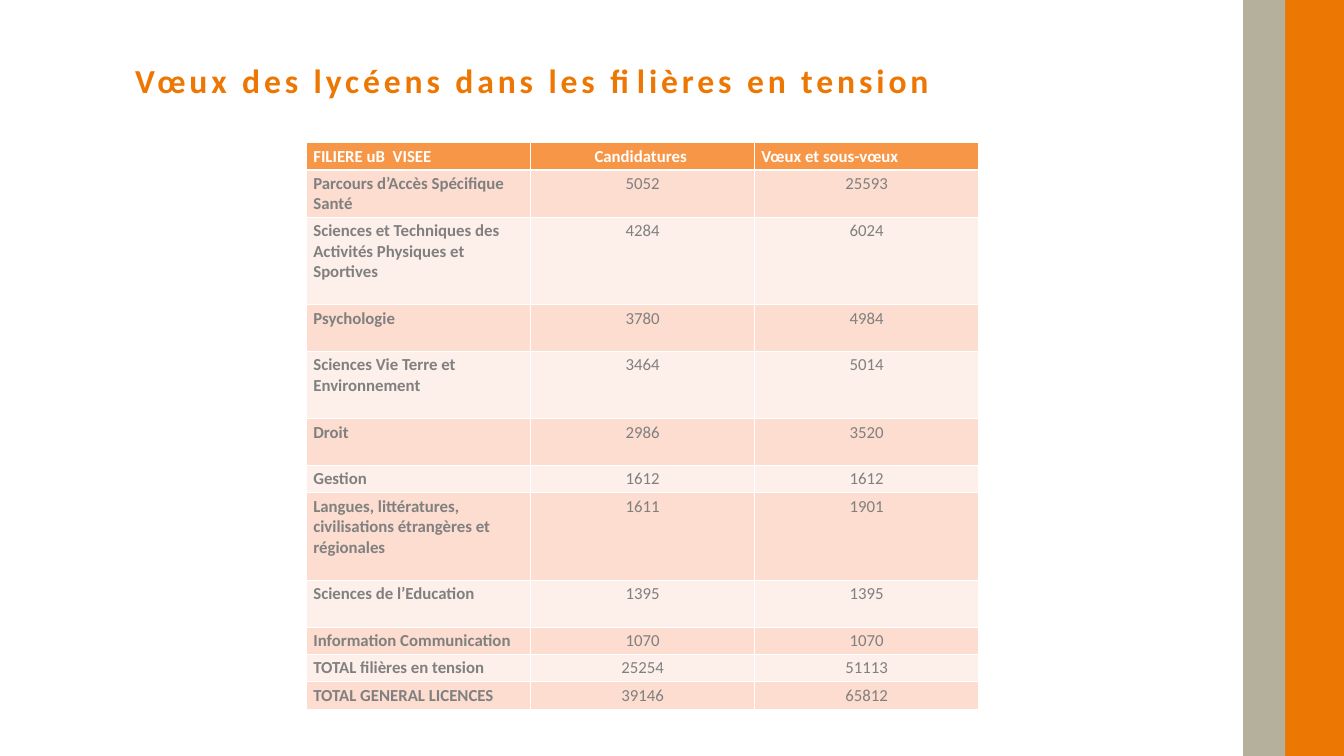
from lxml import etree
from pptx import Presentation
from pptx.dml.color import RGBColor
from pptx.enum.shapes import MSO_SHAPE
from pptx.enum.text import MSO_ANCHOR, PP_ALIGN
from pptx.oxml.ns import qn
from pptx.util import Pt

PX = 9525  # 96 px to the inch
RECTANGLE = MSO_SHAPE.RECTANGLE
LEFT, CENTER = PP_ALIGN.LEFT, PP_ALIGN.CENTER
TOP = MSO_ANCHOR.TOP
COLORS = {
    "orange": "EC7703",
    "taupe": "B5B09C",
    "header": "F79646",
    "band_dark": "FCDDCF",
    "band_light": "FDEFE9",
    "grey": "808080",
    "white": "FFFFFF",
}


def write(frame, text, size=18, color="grey", bold=False, align=LEFT, tracking=0):
    """Fill a text frame with one formatted run; tracking is in points."""
    frame.word_wrap = True
    paragraph = frame.paragraphs[0]
    paragraph.alignment = align
    run = paragraph.add_run()
    run.text = text
    run.font.name = "Calibri"
    run.font.size = Pt(size)
    run.font.bold = bold
    run.font.color.rgb = RGBColor.from_string(COLORS[color])
    if tracking:
        run.font._element.set("spc", str(round(tracking * 100)))


def set_borders(cell, **widths):
    """Draw white cell borders; widths are points keyed by L, R, T and B."""
    properties = cell._tc.get_or_add_tcPr()
    for position, (side, width) in enumerate(widths.items()):
        line = etree.Element(qn(f"a:ln{side}"), w=str(Pt(width)))
        fill = etree.SubElement(line, qn("a:solidFill"))
        etree.SubElement(fill, qn("a:srgbClr"), val=COLORS["white"])
        properties.insert(position, line)


prs = Presentation()
prs.slide_width = 1920 * PX
prs.slide_height = 1080 * PX
slide = prs.slides.add_slide(prs.slide_layouts[6])

# Side bands
for left, width, color in [(1779, 141, "orange"), (1776, 60, "taupe")]:
    band = slide.shapes.add_shape(RECTANGLE, left * PX, 0, width * PX, 1080 * PX)
    band.shadow.inherit = False
    band.fill.solid()
    band.fill.fore_color.rgb = RGBColor.from_string(COLORS[color])
    band.line.fill.background()

# Title
title = slide.shapes.add_textbox(192 * PX, 84 * PX, 1705 * PX, 60 * PX).text_frame
title.margin_left, title.margin_top = 1 * PX, 1 * PX
title.margin_right = title.margin_bottom = 0
title.vertical_anchor = TOP
title.paragraphs[0].space_before = Pt(1)
write(title, "Vœux des lycéens dans les filières en tension",
      size=36, color="orange", bold=True, tracking=4.2)

# Table: row height in px, course, applications, wishes
ROWS = [
    (39, "FILIERE uB  VISEE", "Candidatures ", "Vœux et sous-vœux"),
    (67, "Parcours d’Accès Spécifique Santé", "5052", "25593"),
    (125, "Sciences et Techniques des Activités Physiques et Sportives", "4284", "6024"),
    (67, "Psychologie", "3780", "4984"),
    (96, "Sciences Vie Terre et Environnement", "3464", "5014"),
    (67, "Droit", "2986", "3520"),
    (39, "Gestion", "1612", "1612"),
    (125, "Langues, littératures, civilisations étrangères et régionales", "1611", "1901"),
    (67, "Sciences de l’Education", "1395", "1395"),
    (39, "Information Communication", "1070", "1070"),
    (39, "TOTAL filières en tension", "25254", "51113"),
    (39, "TOTAL GENERAL LICENCES", "39146", "65812"),
]
table_height = sum(row[0] for row in ROWS)
table = slide.shapes.add_table(len(ROWS), 3, 438 * PX, 204 * PX,
                               960 * PX, table_height * PX).table
for column in table.columns:
    column.width = 320 * PX

for r, (height, *texts) in enumerate(ROWS):
    table.rows[r].height = height * PX
    is_header = r == 0
    fill_color = "header" if is_header else "band_dark" if r % 2 else "band_light"
    for c, text in enumerate(texts):
        cell = table.cell(r, c)
        is_left = c == 0 or (is_header and c == 2)
        write(cell.text_frame, text, color="white" if is_header else "grey",
              bold=is_header or c == 0, align=LEFT if is_left else CENTER)
        cell.vertical_anchor = TOP
        cell.fill.solid()
        cell.fill.fore_color.rgb = RGBColor.from_string(COLORS[fill_color])
        set_borders(cell, L=1, R=1, T=3 if r == 1 else 1, B=3 if is_header else 1)

prs.save("out.pptx")
